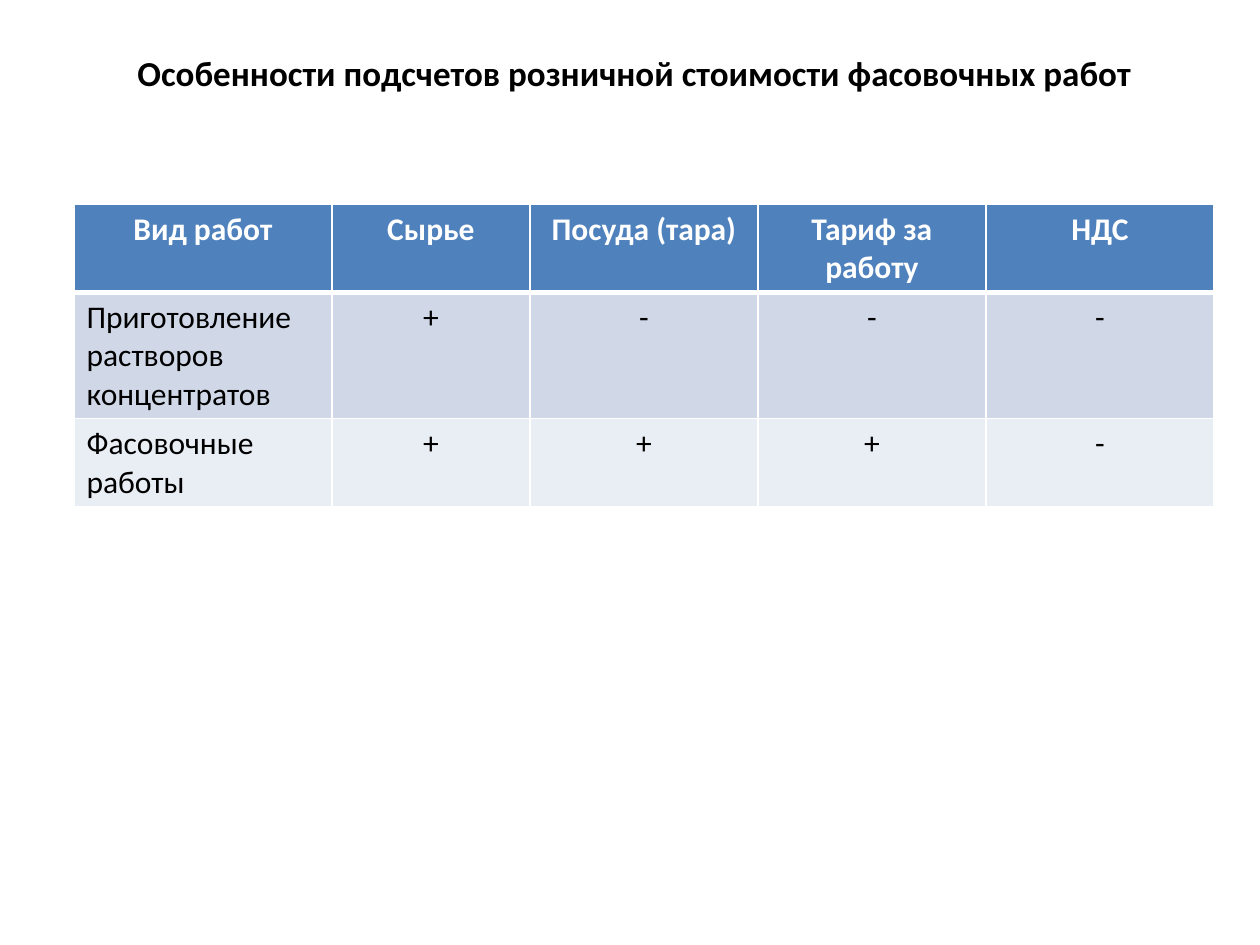
from lxml import etree
from pptx import Presentation, util as u
from pptx.dml.color import RGBColor
from pptx.enum import text
from pptx.oxml import ns

PX_PER_INCH = 126
FONT = "Calibri"
BLACK, WHITE = "000000", "FFFFFF"
HEADER_FILL = "4F81BD"
BAND_FILLS = ["D0D8E8", "E9EDF4"]

TITLE = "Особенности подсчетов розничной стоимости фасовочных работ"
ROWS = [
    ["Вид работ", "Сырье", "Посуда (тара)", "Тариф за работу", "НДС"],
    ["Приготовление растворов концентратов", "+", "-", "-", "-"],
    ["Фасовочные работы", "+", "+", "+", "-"],
]
COLUMN_WIDTHS = [258, 198, 228, 228, 228]
ROW_HEIGHTS = [88, 126, 88]


def px(length):
    return u.Emu(round(length * u.Inches(1) / PX_PER_INCH))


def color(hex_string):
    return RGBColor.from_string(hex_string)


def write(frame, content, size, hex_string, bold, alignment):
    paragraph = frame.paragraphs[0]
    paragraph.text = content
    paragraph.alignment = alignment
    font = paragraph.font
    font.name, font.size, font.bold = FONT, u.Pt(size), bold
    font.color.rgb = color(hex_string)


def set_borders(cell, widths):
    """Draw white borders; widths maps the sides L, R, T, B to points."""
    properties = cell._tc.get_or_add_tcPr()
    for side, width in widths.items():
        line = etree.SubElement(properties, ns.qn(f"a:ln{side}"), w=str(u.Pt(width)))
        fill = etree.SubElement(line, ns.qn("a:solidFill"))
        etree.SubElement(fill, ns.qn("a:srgbClr"), val=WHITE)


def add_title(slide, left, top, width, height):
    box = slide.shapes.add_textbox(px(left), px(top), px(width), px(height))
    box.text_frame.word_wrap = True
    box.text_frame.auto_size = text.MSO_AUTO_SIZE.SHAPE_TO_FIT_TEXT
    write(box.text_frame, TITLE, 20, BLACK, True, text.PP_ALIGN.CENTER)


def add_cost_table(slide, left, top):
    table = slide.shapes.add_table(
        len(ROWS), len(COLUMN_WIDTHS), px(left), px(top),
        px(sum(COLUMN_WIDTHS)), px(sum(ROW_HEIGHTS))).table
    for column, width in zip(table.columns, COLUMN_WIDTHS):
        column.width = px(width)
    for row, height in zip(table.rows, ROW_HEIGHTS):
        row.height = px(height)

    for i, row in enumerate(ROWS):
        header = i == 0
        fill = HEADER_FILL if header else BAND_FILLS[(i - 1) % 2]
        for j, content in enumerate(row):
            cell = table.cell(i, j)
            set_borders(cell, {"L": 1, "R": 1, "T": 3 if i == 1 else 1,
                               "B": 3 if header else 1})
            cell.fill.solid()
            cell.fill.fore_color.rgb = color(fill)
            row_label = j == 0 and not header
            write(cell.text_frame, content, 18, WHITE if header else BLACK, header,
                  text.PP_ALIGN.LEFT if row_label else text.PP_ALIGN.CENTER)


def main():
    presentation = Presentation()
    presentation.slide_width, presentation.slide_height = px(1260), px(945)
    slide = presentation.slides.add_slide(presentation.slide_layouts[6])
    add_title(slide, 74, 45, 1121, 55)
    add_cost_table(slide, 74, 204)
    presentation.save("out.pptx")


if __name__ == "__main__":
    main()
